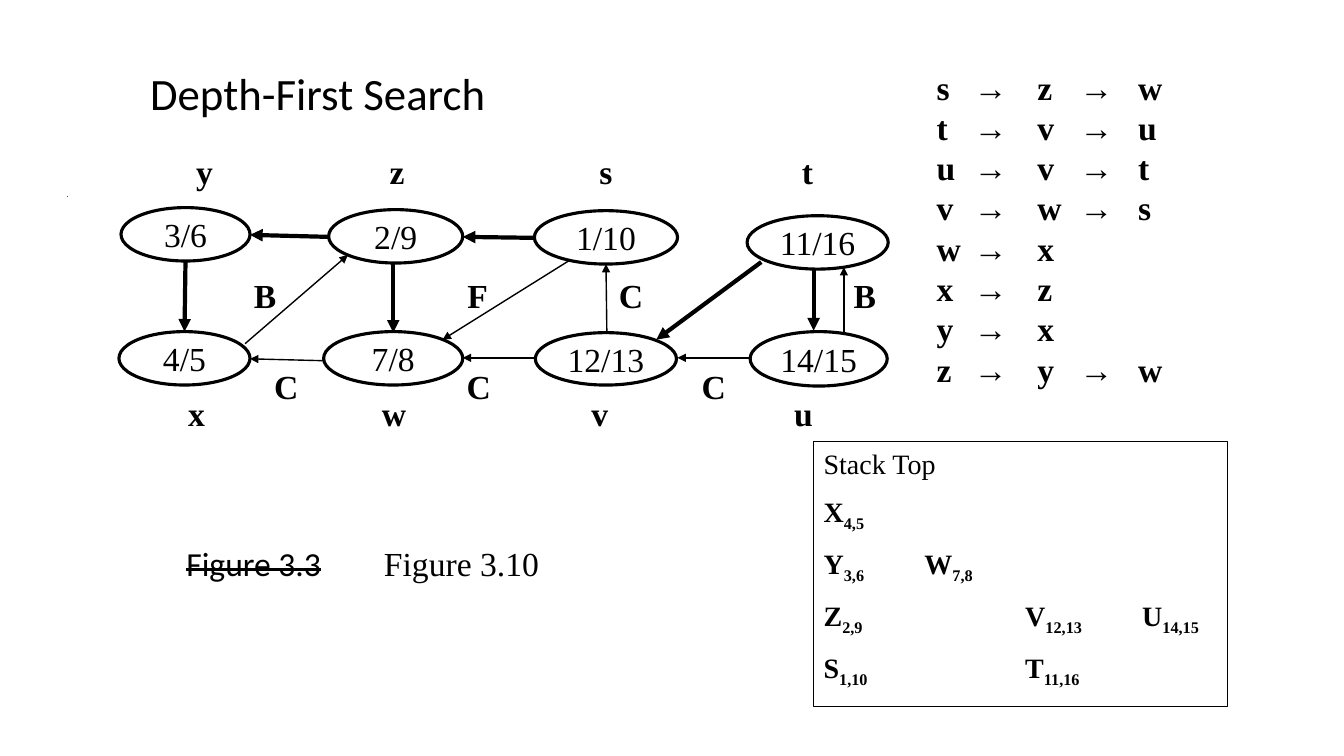
from lxml import etree
from pptx import Presentation
from pptx.dml.color import RGBColor
from pptx.enum.shapes import MSO_CONNECTOR, MSO_SHAPE
from pptx.enum.text import MSO_ANCHOR, MSO_AUTO_SIZE, PP_ALIGN
from pptx.oxml.ns import qn
from pptx.util import Inches, Pt

ELLIPSE, RECTANGLE = MSO_SHAPE.OVAL, MSO_SHAPE.RECTANGLE
STRAIGHT = MSO_CONNECTOR.STRAIGHT
TOP, MIDDLE = MSO_ANCHOR.TOP, MSO_ANCHOR.MIDDLE
CENTER = PP_ALIGN.CENTER
FIT, NO_FIT = MSO_AUTO_SIZE.SHAPE_TO_FIT_TEXT, MSO_AUTO_SIZE.NONE

COLORS = {"ink": "000000", "paper": "FFFFFF", "speck": "5B9BD5"}
SERIF, SANS = "Times New Roman", "Calibri"
THICK, THIN = 3, 1
INSET = 0.1

NODES = [
    ("3/6", (1.2, 2.06, 1.28, 0.53)),
    ("2/9", (3.26, 2.08, 1.33, 0.53)),
    ("1/10", (5.3, 2.09, 1.42, 0.53)),
    ("11/16", (7.41, 2.14, 1.4, 0.53)),
    ("4/5", (1.18, 3.29, 1.3, 0.53)),
    ("7/8", (3.21, 3.29, 1.38, 0.53)),
    ("12/13", (5.31, 3.3, 1.4, 0.52)),
    ("14/15", (7.44, 3.29, 1.36, 0.54)),
]
EDGES = [
    ((3.26, 2.35), (2.48, 2.33), THICK),
    ((2.43, 3.41), (3.45, 2.53), THIN),
    ((5.32, 2.36), (4.59, 2.35), THICK),
    ((5.83, 2.47), (4.39, 3.37), THIN),
    ((3.27, 3.58), (2.48, 3.56), THIN),
    ((5.31, 3.55), (4.59, 3.55), THIN),
    ((6.02, 3.36), (6.01, 2.62), THIN),
    ((7.55, 2.6), (6.51, 3.37), THICK),
    ((8.07, 2.48), (8.07, 3.28), THICK),
    ((8.37, 3.46), (8.37, 2.65), THIN),
    ((7.44, 3.55), (6.72, 3.55), THIN),
    ((1.84, 2.59), (1.83, 3.29), THICK),
    ((3.9, 2.57), (3.9, 3.3), THICK),
]
LABEL_ROWS = [
    ((0.85, 1.45), [("y", 2.03), ("z", 3.94), ("s", 6.01), ("t", 8.01)]),
    ((0.77, 3.85), [("x", 1.95), ("w", 3.91), ("v", 5.95), ("u", 7.97)]),
    ((1.38, 2.68), [("B", 2.63), ("F", 4.74), ("C", 6.26), ("B", 8.58)]),
    ((1.62, 3.58), [("C", 2.84), ("C", 4.75), ("C", 7.08)]),
]
LABEL_ROW_SIZE = (7.85, 0.5)
ADJACENCY = ["szw", "tvu", "uvt", "vws", "wx", "xz", "yx", "zyw"]
ADJACENCY_STOPS = [0.37, 1, 1.42, 2]
STACK_ROWS = [
    [("X", "4,5", 0)],
    [("Y", "3,6", 0), ("W", "7,8", 1)],
    [("Z", "2,9", 0), ("V", "12,13", 2), ("U", "14,15", 3)],
    [("S", "1,10", 0), ("T", "11,16", 2)],
]
STACK_STOPS = [1, 2, 3.16]
CAPTIONS = [
    ("Figure 3.3", (1.75, 5.34, 1.83, 0.5), {"name": SANS}, True),
    ("Figure 3.10", (3.71, 5.34, 1.75, 0.52), {"name": SERIF}, False),
]
TITLE = ("Depth-First Search", (1.39, 0.34, 3.56, 0.83))

prs = Presentation()
prs.slide_width, prs.slide_height = Inches(13.33), Inches(7.5)
slide = prs.slides.add_slide(prs.slide_layouts[6])


def color(name):
    return RGBColor.from_string(COLORS[name])


def apply(target, formats):
    for key, value in formats.items():
        setattr(target, key, value)


def add_run(paragraph, text, **formats):
    run = paragraph.add_run()
    run.text = text
    apply(run.font, {"name": SERIF, "size": Pt(24), **formats})
    run.font.color.rgb = color("ink")
    return run


def add_tabs(paragraph, stops, align="l"):
    tabs = etree.SubElement(paragraph._p.get_or_add_pPr(), qn("a:tabLst"))
    for stop in stops:
        etree.SubElement(tabs, qn("a:tab"), pos=str(Inches(stop)), algn=align)


def next_paragraph(frame, index):
    return frame.add_paragraph() if index else frame.paragraphs[0]


def add_text(box, **formats):
    frame = slide.shapes.add_textbox(*map(Inches, box)).text_frame
    apply(frame, {"word_wrap": True, "auto_size": FIT, "vertical_anchor": TOP, **formats})
    return frame


def add_outlined(preset, box, fill, width):
    shape = slide.shapes.add_shape(preset, *map(Inches, box))
    shape.shadow.inherit = False
    shape.fill.solid()
    shape.fill.fore_color.rgb = color(fill)
    shape.line.color.rgb = color("ink")
    shape.line.width = Pt(width)
    return shape


def add_edge(start, end, width):
    edge = slide.shapes.add_connector(STRAIGHT, *map(Inches, start + end))
    edge.line.color.rgb = color("ink")
    edge.line.width = Pt(width)
    etree.SubElement(edge.line._get_or_add_ln(), qn("a:tailEnd"), type="triangle")
    etree.SubElement(edge._element.spPr, qn("a:effectLst"))


def add_node(times, box):
    frame = add_outlined(ELLIPSE, box, "paper", 2.25).text_frame
    apply(frame, {"word_wrap": False, "auto_size": NO_FIT, "vertical_anchor": MIDDLE,
                  "margin_left": 0, "margin_right": 0, "margin_top": 0, "margin_bottom": 0})
    frame.paragraphs[0].alignment = CENTER
    add_run(frame.paragraphs[0], times)


def add_label_row(corner, labels):
    row = add_text(corner + LABEL_ROW_SIZE, vertical_anchor=MIDDLE).paragraphs[0]
    add_tabs(row, [x - corner[0] - INSET for _, x in labels], "ctr")
    add_run(row, "".join("\t" + letter for letter, _ in labels), bold=True)


def add_adjacency():
    frame = add_text((9.19, 0.61, 2.91, 3.33))
    for index, vertices in enumerate(ADJACENCY):
        line = next_paragraph(frame, index)
        add_tabs(line, ADJACENCY_STOPS)
        add_run(line, "\t→\t".join(vertices), bold=True)


def add_stack():
    frame = add_outlined(RECTANGLE, (8.07, 4.38, 4.1, 2.63), "paper", 0.5).text_frame
    apply(frame, {"word_wrap": True, "vertical_anchor": TOP})
    for index, entries in enumerate([[]] + STACK_ROWS):
        line = next_paragraph(frame, index)
        apply(line, {"alignment": PP_ALIGN.LEFT, "space_after": Pt(10)})
        add_tabs(line, STACK_STOPS)
        if not entries:
            add_run(line, "Stack Top", size=Pt(20))
        column = 0
        for vertex, times, stop in entries:
            add_run(line, "\t" * (stop - column) + vertex, size=Pt(20), bold=True)
            subscript = add_run(line, times, size=Pt(20), bold=True)
            subscript.font._element.set("baseline", "-25000")
            column = stop


for edge in EDGES:
    add_edge(*edge)
add_outlined(RECTANGLE, (0.67, 1.95, 0, 0), "speck", 0.75)
for node in NODES:
    add_node(*node)
for label_row in LABEL_ROWS:
    add_label_row(*label_row)
add_adjacency()
add_stack()
for caption, box, formats, struck in CAPTIONS:
    figure = add_run(add_text(box).paragraphs[0], caption, **formats)
    if struck:
        figure.font._element.set("strike", "sngStrike")

heading = add_text(TITLE[1], word_wrap=False).paragraphs[0]
heading.line_spacing = 1.5
add_run(heading, TITLE[0], name=SANS, size=Pt(32))

prs.save("out.pptx")
